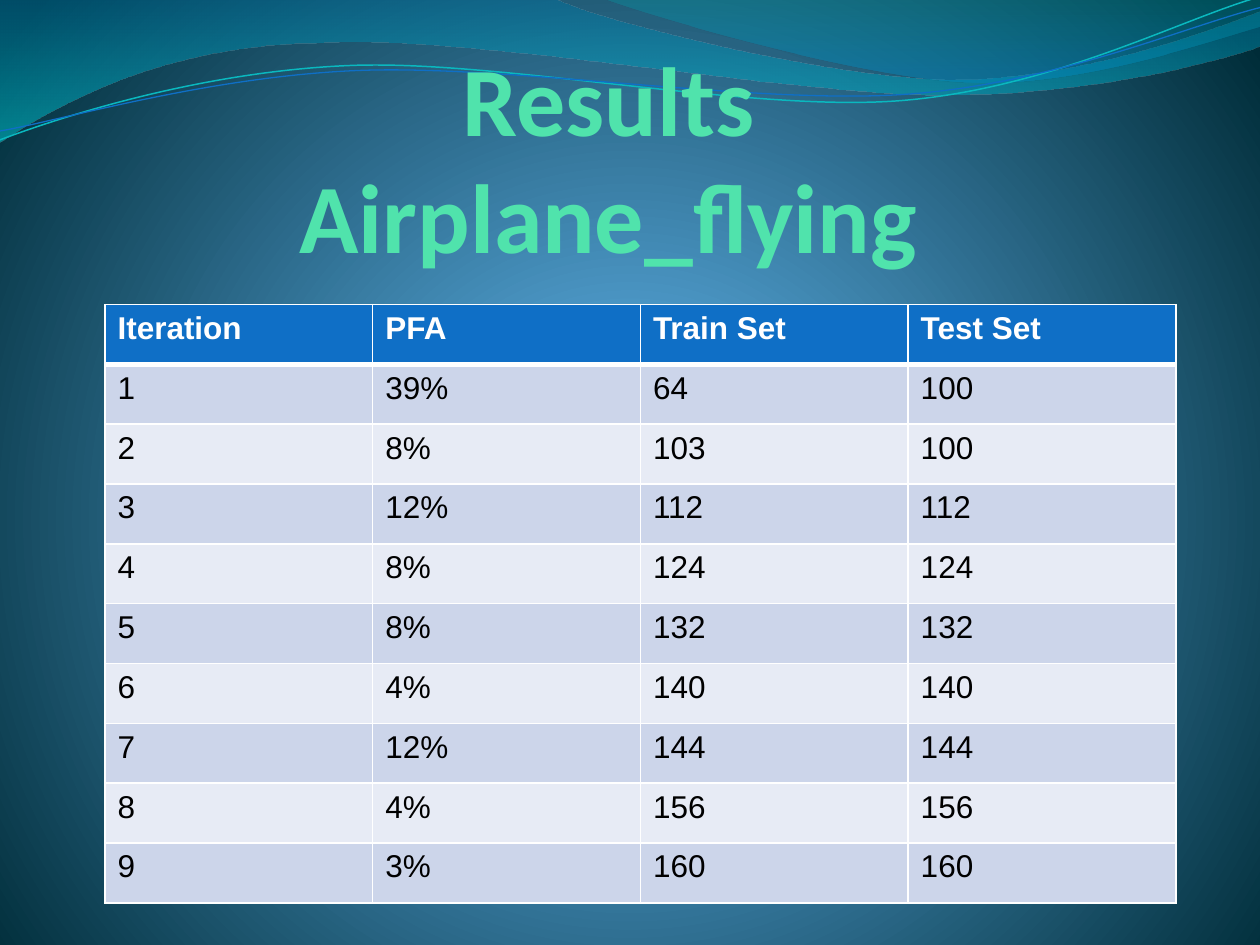
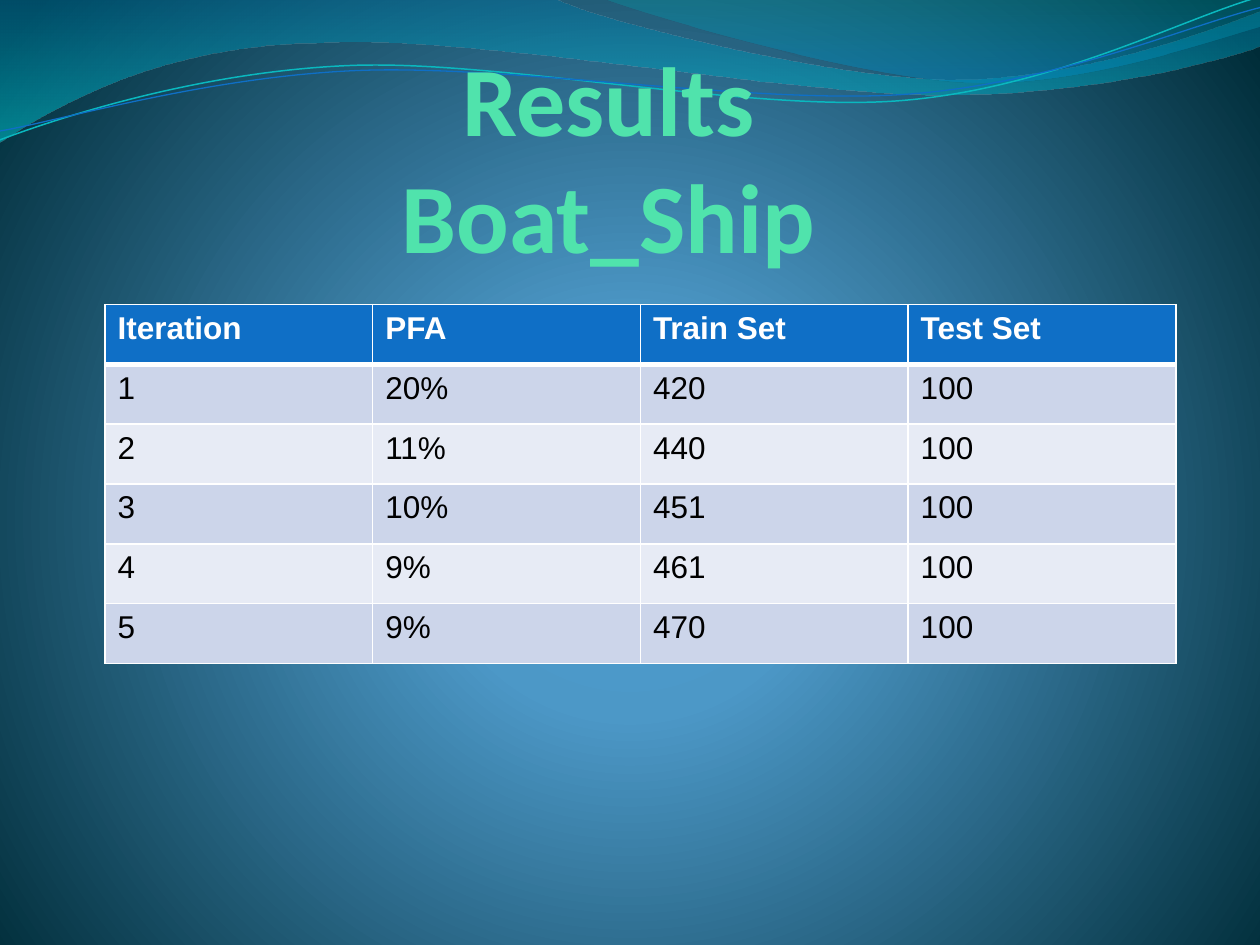
from math import cos, radians, sin

from lxml import etree
from pptx import Presentation
from pptx.dml.color import RGBColor
from pptx.enum.text import MSO_ANCHOR as Anchor, PP_ALIGN as Align
from pptx.oxml.ns import qn
from pptx.util import Inches, Pt

# The grid has square cells, ten to the inch
COLUMNS, ROWS = 100, 75
CELL = Inches(0.1)
DRAWING = "http://schemas.openxmlformats.org/drawingml/2006/main"

COLORS = {
    "title": "50E3AC", "header": "0F6FC6", "odd": "CCD5EA", "even": "E7EBF5",
    "white": "FFFFFF", "black": "000000", "teal_line": "0AB8BF", "blue_line": "0F6FC6",
    "glow": "4AA0D6", "sky": "4C98C7", "deep": "002C38",
    "wave_top": "0074A1", "wave_end": "00C6CF", "crest_top": "00A1A9", "crest_end": "008BBF",
}

# Gradient stops: position, colour, opacity, all in percent
BACKGROUND = [(0, "glow", 100), (25, "sky", 100), (100, "deep", 100)]
WAVE_FILL = [(0, "wave_top", 45), (100, "wave_end", 55)]
CREST_FILL = [(0, "crest_top", 30), (80, "crest_end", 45)]
DOWNWARD = '<a:lin ang="5400000" scaled="1"/>'
RADIAL = ('<a:path path="circle"><a:fillToRect l="10000" t="110000" '
          'r="10000" b="100000"/></a:path>')

# Outlines: a start point, then lines (2 numbers) and Bezier curves (6 numbers)
WAVE = [(0, -0.1), (44, -0.1), (47.6, 1.7, 66.4, 6.3, 75.8, 6.3),
        (85.3, 6.3, 95.8, 2.6, 100, 0.9), (100.1, 3.6),
        (98.3, 4.4, 87, 7.6, 74.6, 7.5), (62.2, 7.5, 38.2, 2.8, 25.7, 3.4),
        (12.9, 3.5, 4.6, 8.3, -0.1, 11.3), (0, -0.1)]
CREST = [(47.9, -0.1), (50.9, 1.1, 68.2, 6.2, 76.9, 6.5),
         (85.6, 6.9, 96.1, 3.2, 100, 2.1), (100, 0), (47.9, -0.1)]
TEAL_CURVE = [(0, 11.1), (4.8, 9.3, 15.8, 5.7, 27.7, 5.2),
              (39.5, 4.7, 59.3, 8.9, 71.3, 8), (83.3, 7.1, 93.8, 1.5, 99.8, -0.2)]
BLUE_CURVE = [(0, 10.4), (4.7, 9.6, 16.4, 6.1, 28.3, 5.6),
              (40.3, 5.1, 59.7, 8.3, 71.7, 7.5), (83.6, 6.7, 94.1, 2.1, 100, 0.6)]
CURVE_TILT = -2.7

HEADINGS = ("Iteration", "PFA", "Train Set", "Test Set")
RESULTS = {
    "Airplane_flying": [
        ("39%", 64, 100), ("8%", 103, 100), ("12%", 112, 112),
        ("8%", 124, 124), ("8%", 132, 132), ("4%", 140, 140),
        ("12%", 144, 144), ("4%", 156, 156), ("3%", 160, 160)],
    "Boat_Ship": [
        ("20%", 420, 100), ("11%", 440, 100), ("10%", 451, 100),
        ("9%", 461, 100), ("9%", 470, 100)],
}


def cells(*lengths):
    return [round(length * CELL) for length in lengths]


def color(name):
    return RGBColor.from_string(COLORS[name])


def write(frame, text, font="Arial", size=18, ink="black", bold=False, align=Align.LEFT):
    """Fill the frame with one paragraph; a vertical tab breaks the line."""
    paragraph = frame.paragraphs[0]
    paragraph.text = text
    paragraph.alignment = align
    for run in paragraph.runs:
        run.font.name, run.font.size, run.font.bold = font, Pt(size), bold
        run.font.color.rgb = color(ink)


def use_gradient(element, stops, direction):
    """Put a gradient in place of the first solid fill inside the element."""
    stop_list = "".join(
        f'<a:gs pos="{position * 1000}"><a:srgbClr val="{COLORS[name]}">'
        f'<a:alpha val="{opacity * 1000}"/></a:srgbClr></a:gs>'
        for position, name, opacity in stops)
    gradient = etree.fromstring(
        f'<a:gradFill xmlns:a="{DRAWING}" rotWithShape="1">'
        f'<a:gsLst>{stop_list}</a:gsLst>{direction}</a:gradFill>')
    solid = next(element.iter(qn("a:solidFill")))
    solid.getparent().replace(solid, gradient)


def turn(point, center, degrees):
    angle = radians(degrees)
    x, y = point[0] - center[0], point[1] - center[1]
    return (center[0] + x * cos(angle) - y * sin(angle),
            center[1] + x * sin(angle) + y * cos(angle))


def bend(shape, segments):
    """Join each three line steps that belong to a Bezier segment into one curve."""
    steps = iter(list(shape.element.iter(qn("a:lnTo"))))
    for segment in segments:
        first = next(steps)
        if len(segment) == 6:
            curve = etree.Element(qn("a:cubicBezTo"))
            first.addprevious(curve)
            for step in (first, next(steps), next(steps)):
                curve.append(step[0])
                step.getparent().remove(step)


def set_borders(cell, **widths):
    properties = cell._tc.get_or_add_tcPr()
    for side in "LRTB":
        properties.append(etree.fromstring(
            f'<a:ln{side} xmlns:a="{DRAWING}" w="{Pt(widths.get(side, 1))}">'
            f'<a:solidFill><a:srgbClr val="{COLORS["white"]}"/></a:solidFill></a:ln{side}>'))


class Deck:
    def __init__(self):
        self.presentation = Presentation()
        self.presentation.slide_width, self.presentation.slide_height = cells(COLUMNS, ROWS)
        self.slide = None

    def add_slide(self):
        self.slide = self.presentation.slides.add_slide(self.presentation.slide_layouts[6])
        self.slide.background.fill.solid()
        use_gradient(self.slide.element, BACKGROUND, RADIAL)
        self.band(WAVE, WAVE_FILL)
        self.band(CREST, CREST_FILL)
        self.curve(TEAL_CURVE, "teal_line", 0.85, center=(49.9, 5.75))
        self.curve(BLUE_CURVE, "blue_line", 0.75, center=(49.95, 5.9))

    def outline(self, outline, close, center=(0, 0), tilt=0):
        # Points are laid out level, then the whole shape is tilted
        points = [cells(*turn(segment[i:i + 2], center, -tilt))
                  for segment in outline for i in range(0, len(segment), 2)]
        builder = self.slide.shapes.build_freeform(*points[0])
        builder.add_line_segments(points[1:], close=close)
        shape = builder.convert_to_shape()
        bend(shape, outline[1:])
        shape.rotation = tilt
        shape.shadow.inherit = False
        return shape

    def band(self, outline, stops):
        shape = self.outline(outline, close=True)
        shape.fill.solid()
        use_gradient(shape.element, stops, DOWNWARD)
        shape.line.fill.background()

    def curve(self, outline, ink, width, center):
        shape = self.outline(outline, close=False, center=center, tilt=CURVE_TILT)
        shape.fill.background()
        shape.line.color.rgb = color(ink)
        shape.line.width = Pt(width)

    def title(self, text):
        frame = self.slide.shapes.add_textbox(*cells(5.8, 2.5, 85, 19.2)).text_frame
        frame.word_wrap = True
        frame.vertical_anchor = Anchor.BOTTOM
        frame.margin_left = frame.margin_right = frame.margin_top = frame.margin_bottom = 0
        write(frame, text, font="Calibri", size=56, ink="title", bold=True, align=Align.CENTER)

    def table(self, headings, records, left=8.33, top=24.17, width=85, row_height=4.75):
        lines = [headings, *records]
        box = cells(left, top, width, row_height * len(lines))
        table = self.slide.shapes.add_table(len(lines), len(headings), *box).table
        for row in table.rows:
            row.height = cells(row_height)[0]
        for row_index, line in enumerate(lines):
            is_header = row_index == 0
            fill = "header" if is_header else ("even", "odd")[row_index % 2]
            # A thick rule parts the header from the first record
            rule = {0: {"B": 3}, 1: {"T": 3}}.get(row_index, {})
            for column_index, value in enumerate(line):
                cell = table.cell(row_index, column_index)
                set_borders(cell, **rule)
                cell.fill.solid()
                cell.fill.fore_color.rgb = color(fill)
                write(cell.text_frame, str(value), bold=is_header,
                      ink="white" if is_header else "black")


def main():
    deck = Deck()
    for category, results in RESULTS.items():
        deck.add_slide()
        deck.title(f"Results\v{category}")
        deck.table(HEADINGS, [(number, *result) for number, result in enumerate(results, 1)])
    deck.presentation.save("out.pptx")


if __name__ == "__main__":
    main()
